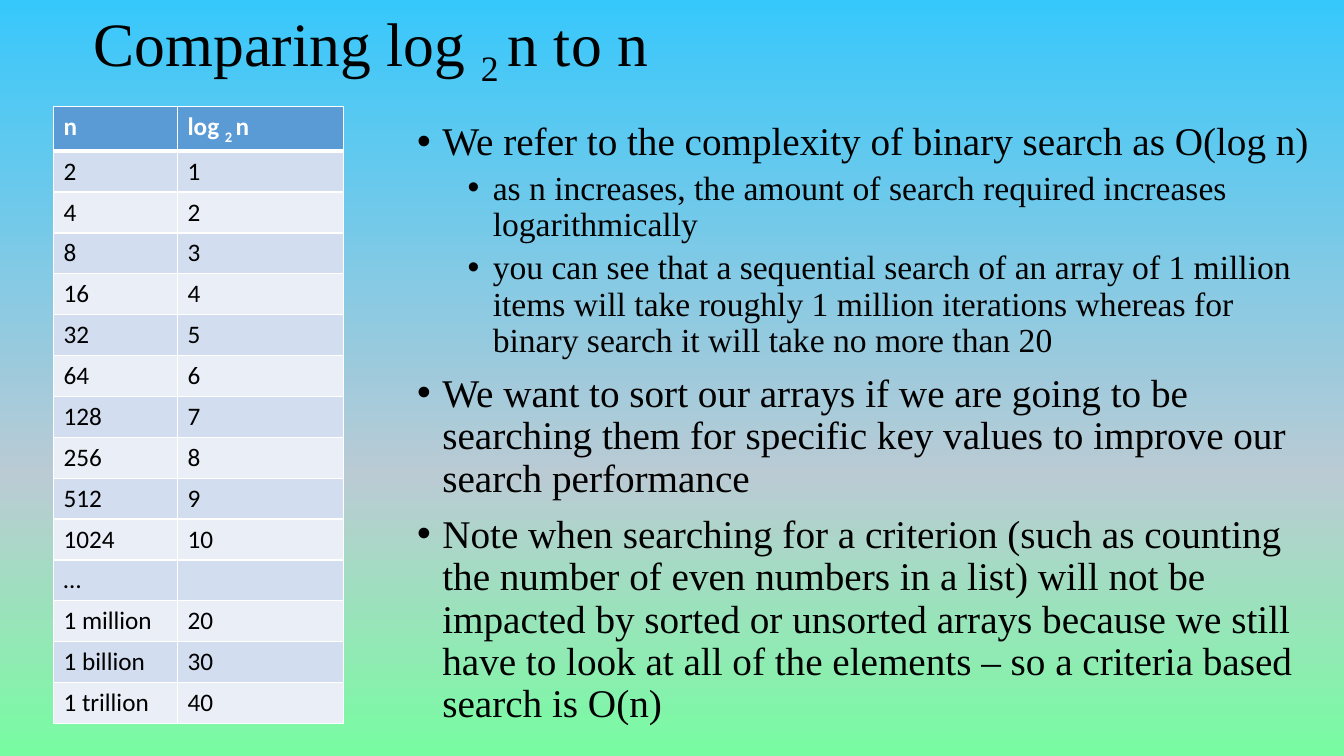
from copy import deepcopy

from lxml.etree import SubElement, fromstring
from pptx import Presentation
from pptx.dml.color import RGBColor
from pptx.enum.text import MSO_ANCHOR as Anchor
from pptx.oxml.ns import nsdecls, qn
from pptx.util import Pt

TITLE = ["Comparing log ", "2 ", "n to n"]
HEADER = [["n"], ["log ", "2 ", "n"]]
POWERS = [[str(2 ** power), str(power)] for power in range(1, 11)]
LARGE = [["…", ""], ["1 million", "20"], ["1 billion", "30"], ["1 trillion", "40"]]
BULLETS = [
    (0, "We refer to the complexity of binary search as O(log n)"),
    (1, "as n increases, the amount of search required increases logarithmically"),
    (1, "you can see that a sequential search of an array of 1 million items will "
        "take roughly 1 million iterations whereas for binary search it will take "
        "no more than 20"),
    (0, "We want to sort our arrays if we are going to be searching them for "
        "specific key values to improve our search performance"),
    (0, "Note when searching for a criterion (such as counting the number of even "
        "numbers in a list) will not be impacted by sorted or unsorted arrays "
        "because we still have to look at all of the elements – so a criteria "
        "based search is O(n)"),
]


def rgb(value):
    return RGBColor.from_string(value)


def apply(target, values):
    for name, value in values.items():
        setattr(target, name, value)


class SlideBuilder:
    """Holds the style and the current slide, and draws each kind of element."""

    serif = "Times New Roman"
    sans = "Calibri"
    black = "000000"
    white = "FFFFFF"
    header_fill = "5B9BD5"
    band_fills = ["D2DEEF", "EAEFF7"]
    levels = [
        {"size": 28, "indent": 18, "before": 10},
        {"size": 24, "indent": 54, "before": 5},
    ]

    def __init__(self, slide):
        self.slide = slide

    def background(self, stops):
        fill = self.slide.background.fill
        fill.gradient()
        fill.gradient_angle = 270
        first = fill._fill._gradFill.gsLst[0]
        for _ in stops[2:]:
            first.addnext(deepcopy(first))
        for stop, (position, color) in zip(fill.gradient_stops, stops):
            stop.position = position
            stop.color.rgb = rgb(color)

    def add_runs(self, paragraph, parts, color, **font_values):
        for index, text in enumerate(parts):
            run = paragraph.add_run()
            run.text = text
            apply(run.font, font_values)
            run.font.color.rgb = rgb(color)
            if index == 1:
                run._r.get_or_add_rPr().set("baseline", "-25000")

    def text_frame(self, left, top, width, height, anchor):
        box = self.slide.shapes.add_textbox(Pt(left), Pt(top), Pt(width), Pt(height))
        apply(box.text_frame, {"word_wrap": True, "vertical_anchor": anchor})
        return box.text_frame

    def title(self, parts, *place):
        paragraph = self.text_frame(*place, Anchor.MIDDLE).paragraphs[0]
        paragraph.line_spacing = 0.9
        self.add_runs(paragraph, parts, self.black, name=self.serif, size=Pt(44))

    def bullets(self, items, *place):
        frame = self.text_frame(*place, Anchor.TOP)
        for index, (level, text) in enumerate(items):
            style = self.levels[level]
            paragraph = frame.add_paragraph() if index else frame.paragraphs[0]
            apply(paragraph, {"level": level, "line_spacing": 0.9,
                              "space_before": Pt(style["before"])})
            properties = paragraph._p.get_or_add_pPr()
            properties.set("marL", str(Pt(style["indent"])))
            properties.set("indent", str(Pt(-18)))
            SubElement(properties, qn("a:buFont")).set("typeface", "Arial")
            SubElement(properties, qn("a:buChar")).set("char", "•")
            self.add_runs(paragraph, [text], self.black,
                          name=self.serif, size=Pt(style["size"]))

    def borders(self, cell, top, bottom):
        properties = cell._tc.get_or_add_tcPr()
        widths = {"lnL": 1, "lnR": 1, "lnT": top, "lnB": bottom}
        for index, (side, width) in enumerate(widths.items()):
            properties.insert(index, fromstring(
                f'<a:{side} {nsdecls("a")} w="{Pt(width)}"><a:solidFill>'
                f'<a:srgbClr val="{self.white}"/></a:solidFill></a:{side}>'))

    def table(self, rows, left, top, column_widths, row_height):
        table = self.slide.shapes.add_table(
            len(rows), len(column_widths), Pt(left), Pt(top),
            Pt(sum(column_widths)), Pt(row_height * len(rows))).table
        apply(table, {"first_row": False, "horz_banding": False})
        for column, width in zip(table.columns, column_widths):
            column.width = Pt(width)
        for index, (row, values) in enumerate(zip(table.rows, rows)):
            row.height = Pt(row_height)
            header = index == 0
            fill = self.header_fill if header else self.band_fills[(index - 1) % 2]
            for cell, parts in zip(row.cells, values):
                cell.fill.solid()
                cell.fill.fore_color.rgb = rgb(fill)
                self.borders(cell, 3 if index == 1 else 1, 3 if header else 1)
                self.add_runs(cell.text_frame.paragraphs[0], parts,
                              self.white if header else self.black,
                              name=self.sans, size=Pt(18), bold=header)


def main():
    presentation = Presentation()
    apply(presentation, {"slide_width": Pt(960), "slide_height": Pt(540)})
    builder = SlideBuilder(presentation.slides.add_slide(presentation.slide_layouts[6]))
    builder.background([(0, "37C8FB"), (0.63, "BACBD4"), (1, "78FCA1")])
    builder.title(TITLE, 60, -20.88, 828, 104.4)
    body_rows = [[[text] if text else [] for text in row] for row in POWERS + LARGE]
    builder.table([HEADER] + body_rows, 38.2, 76.2, [88.6, 118.6], 29.2)
    builder.bullets(BULLETS, 290.9, 83.5, 656.6, 456.5)
    presentation.save("out.pptx")


if __name__ == "__main__":
    main()
